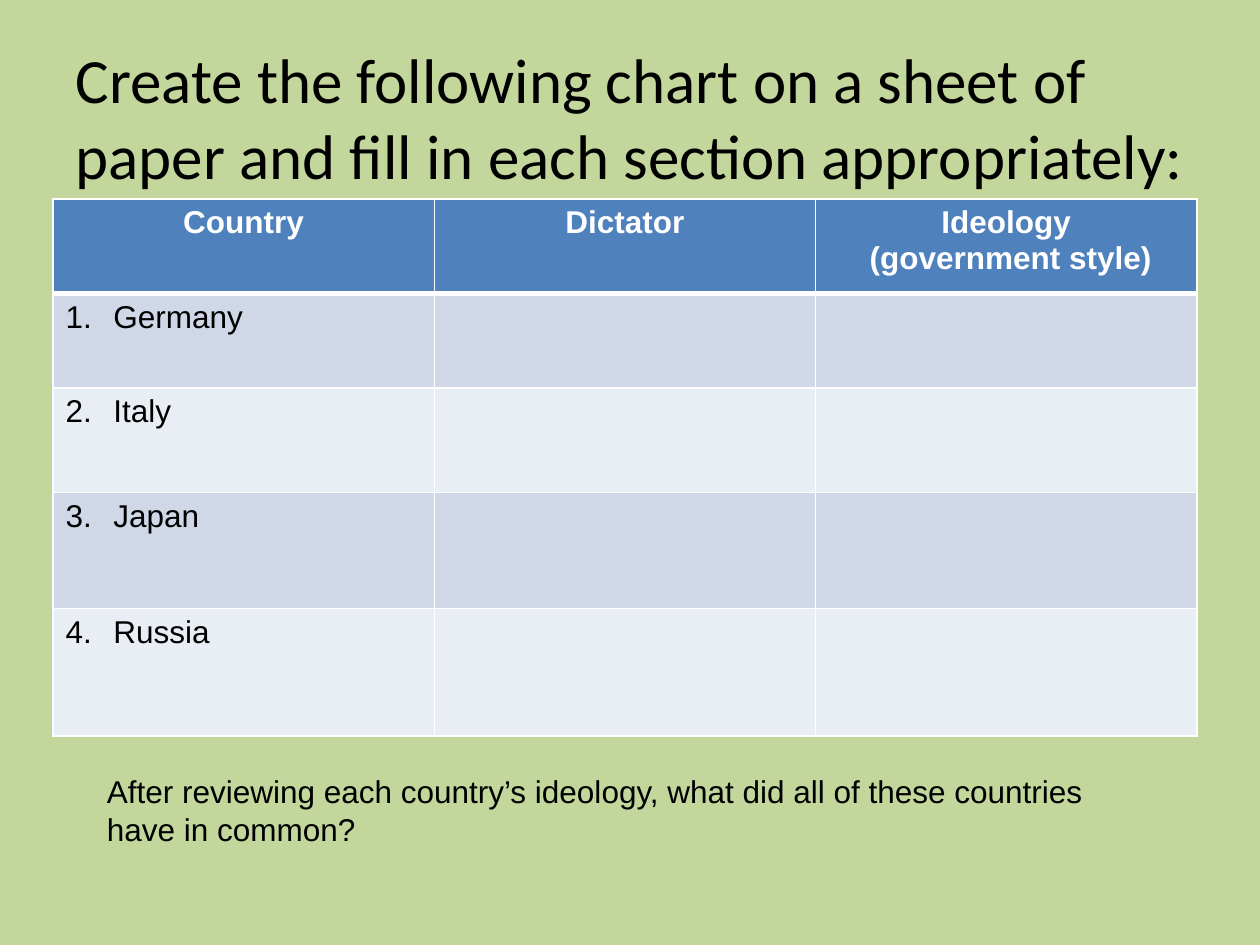
from lxml import etree
from pptx import Presentation
from pptx.dml.color import RGBColor
from pptx.enum.text import MSO_ANCHOR, MSO_AUTO_SIZE, PP_ALIGN
from pptx.oxml.ns import qn
from pptx.util import Inches, Pt

LEFT, CENTER = PP_ALIGN.LEFT, PP_ALIGN.CENTER
MIDDLE = MSO_ANCHOR.MIDDLE
NO_FIT, GROW = MSO_AUTO_SIZE.NONE, MSO_AUTO_SIZE.SHAPE_TO_FIT_TEXT
GREEN, BLUE, WHITE, BLACK = "C3D69B", "4F81BD", "FFFFFF", "000000"
BANDS = ["D0D8E8", "E9EDF4"]
HEADS = ["Country", "Dictator", "Ideology\n (government style)"]
LANDS = ["Germany", "Italy", "Japan", "Russia"]
ROWS = [0.75, 0.75, 0.83, 0.92, 1.01]


def paint(target, color):
    """Give a fill one solid colour."""
    target.fill.solid()
    target.fill.fore_color.rgb = RGBColor.from_string(color)


def write(frame, text, size=18, color=BLACK, face="Arial", bold=False, align=LEFT):
    """Put text in a frame and format its paragraphs."""
    frame.text = text
    for para in frame.paragraphs:
        para.alignment = align
        font = para.font
        font.name, font.size, font.bold = face, Pt(size), bold
        font.color.rgb = RGBColor.from_string(color)


def number(para, start):
    """Number a paragraph with a hanging indent."""
    props = para._p.get_or_add_pPr()
    props.set("marL", str(Inches(0.38)))
    props.set("indent", str(-Inches(0.38)))
    mark = etree.Element(qn("a:buAutoNum"), type="arabicPeriod", startAt=str(start))
    props.insert(0, mark)


def edge(cell, base):
    """Draw white borders round a cell, with its own base width."""
    props = cell._tc.get_or_add_tcPr()
    for side, width in zip("LRTB", [1, 1, 1, base]):
        line = etree.SubElement(props, qn(f"a:ln{side}"), w=str(Pt(width)))
        fill = etree.SubElement(line, qn("a:solidFill"))
        etree.SubElement(fill, qn("a:srgbClr"), val=WHITE)


def add_title(slide, box):
    """Place the heading in the title placeholder."""
    title = slide.shapes.title
    title.left, title.top, title.width, title.height = map(Inches, box)
    frame = title.text_frame
    write(frame, "Create the following chart on a sheet of paper "
          "and fill in each section appropriately:", 36, face="Calibri")
    frame.word_wrap, frame.auto_size = True, NO_FIT
    frame.vertical_anchor = MIDDLE


def add_grid(slide, box):
    """Build the table of countries, dictators and ideologies."""
    table = slide.shapes.add_table(len(ROWS), len(HEADS), *map(Inches, box)).table
    for col in table.columns:
        col.width = Inches(box[2] / len(HEADS))
    for r, height in enumerate(ROWS):
        table.rows[r].height = Inches(height)
        for c, head in enumerate(HEADS):
            cell = table.cell(r, c)
            edge(cell, 1 if r else 3)
            paint(cell, BANDS[(r - 1) % 2] if r else BLUE)
            if r == 0:
                write(cell.text_frame, head, color=WHITE, bold=True, align=CENTER)
            elif c == 0:
                write(cell.text_frame, LANDS[r - 1])
                number(cell.text_frame.paragraphs[0], r)


def add_question(slide, box):
    """Place the closing question below the table."""
    frame = slide.shapes.add_textbox(*map(Inches, box)).text_frame
    write(frame, "After reviewing each country’s ideology, "
          "what did all of these countries have in common?")
    frame.word_wrap, frame.auto_size = True, GROW


def main():
    """Build and save the slide."""
    deck = Presentation()
    deck.slide_width, deck.slide_height = Inches(10), Inches(7.5)
    slide = deck.slides.add_slide(deck.slide_layouts[5])
    paint(slide.background, GREEN)
    add_title(slide, (0.5, 0.3, 9, 1.25))
    add_grid(slide, (0.42, 1.58, 9.08, sum(ROWS)))
    add_question(slide, (0.75, 6.08, 8.25, 0.71))
    deck.save("out.pptx")


if __name__ == "__main__":
    main()
